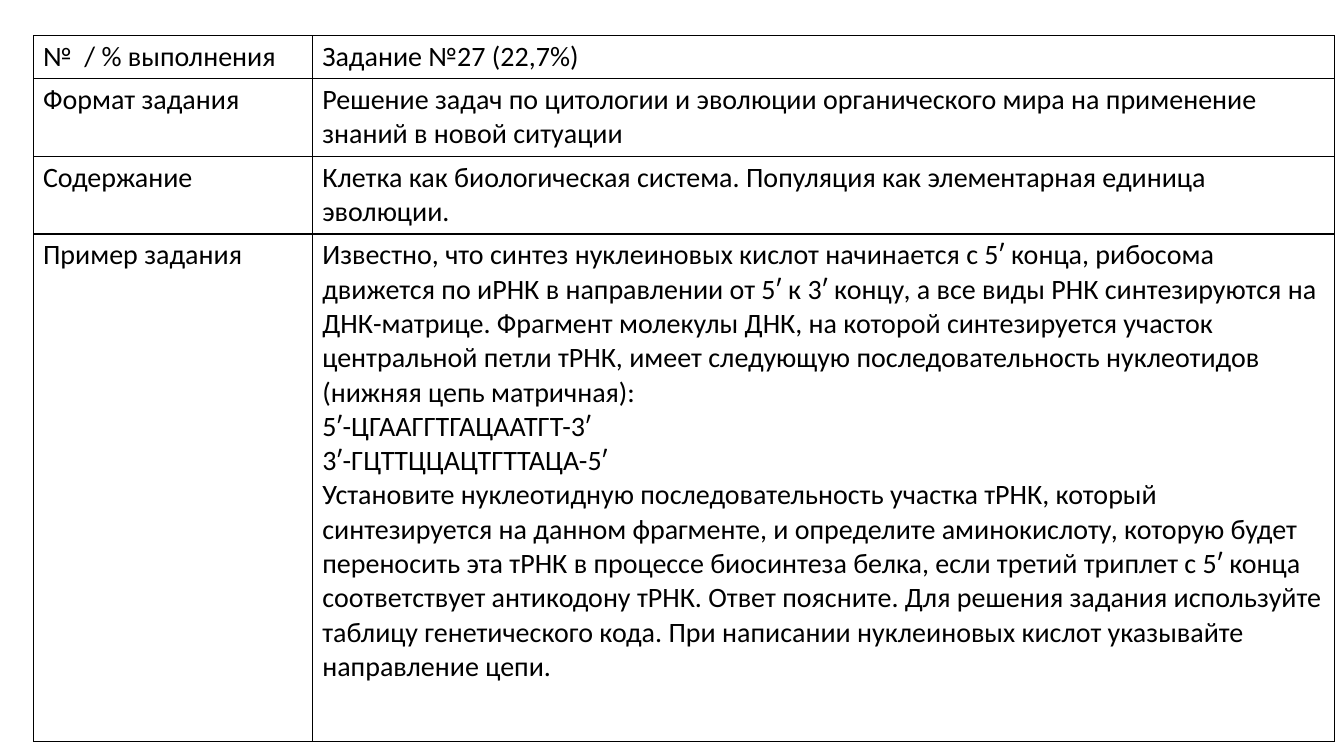
from lxml.etree import SubElement
from pptx import Presentation
from pptx.dml.color import RGBColor
from pptx.oxml.ns import qn
from pptx.util import Emu, Pt

PX = 9525  # EMU per px, 96 px to the inch
BLACK = RGBColor(0x00, 0x00, 0x00)

prs = Presentation()
prs.slide_width = Emu(1280 * PX)
prs.slide_height = Emu(720 * PX)
slide = prs.slides.add_slide(prs.slide_layouts[6])

# Task description: label, then the paragraphs beside it
task_rows = [
    ("№  / % выполнения", ["Задание №27 (22,7%)"]),
    ("Формат задания", [
        "Решение задач по цитологии и эволюции органического мира "
        "на применение знаний в новой ситуации"]),
    ("Содержание", [
        "Клетка как биологическая система. Популяция как элементарная "
        "единица эволюции."]),
    ("Пример задания", [
        "Известно, что синтез нуклеиновых кислот начинается с 5ʹ конца, "
        "рибосома движется по иРНК в направлении от 5ʹ к 3ʹ концу, а все "
        "виды РНК синтезируются на ДНК-матрице. Фрагмент молекулы ДНК, на "
        "которой синтезируется участок центральной петли тРНК, имеет "
        "следующую последовательность нуклеотидов (нижняя цепь матричная):",
        "5ʹ-ЦГААГГТГАЦААТГТ-3ʹ",
        "3ʹ-ГЦТТЦЦАЦТГТТАЦА-5ʹ",
        "Установите нуклеотидную последовательность участка тРНК, который "
        "синтезируется на данном фрагменте, и определите аминокислоту, "
        "которую будет переносить эта тРНК в процессе биосинтеза белка, если "
        "третий триплет с 5ʹ конца соответствует антикодону тРНК. Ответ "
        "поясните. Для решения задания используйте таблицу генетического "
        "кода. При написании нуклеиновых кислот указывайте направление "
        "цепи."]),
]
column_widths = [266, 973]
row_heights = [41, 74, 74, 483]

# Table grid
task_table = slide.shapes.add_table(
    len(row_heights), len(column_widths), Emu(32 * PX), Emu(34 * PX),
    Emu(sum(column_widths) * PX), Emu(sum(row_heights) * PX)).table
task_table.first_row = False
task_table.horz_banding = False
for column, width in zip(task_table.columns, column_widths):
    column.width = Emu(width * PX)
for row, height in zip(task_table.rows, row_heights):
    row.height = Emu(height * PX)

# Cells: text, margins, thin black borders
for row, (label, description) in zip(task_table.rows, task_rows):
    for cell, texts in zip(row.cells, ([label], description)):
        cell.margin_left = cell.margin_right = Emu(9 * PX)
        cell.margin_top = cell.margin_bottom = Emu(4 * PX)
        frame = cell.text_frame
        for i, text in enumerate(texts):
            paragraph = frame.add_paragraph() if i else frame.paragraphs[0]
            run = paragraph.add_run()
            run.text = text
            run.font.name = "Calibri"
            run.font.size = Pt(20)
            run.font.color.rgb = BLACK

        cell_props = cell._tc.get_or_add_tcPr()
        for side in ("a:lnL", "a:lnR", "a:lnT", "a:lnB"):
            border = SubElement(cell_props, qn(side), w=str(Pt(1)))
            border_fill = SubElement(border, qn("a:solidFill"))
            SubElement(border_fill, qn("a:srgbClr"), val=str(BLACK))
        cell.fill.background()

prs.save("out.pptx")
